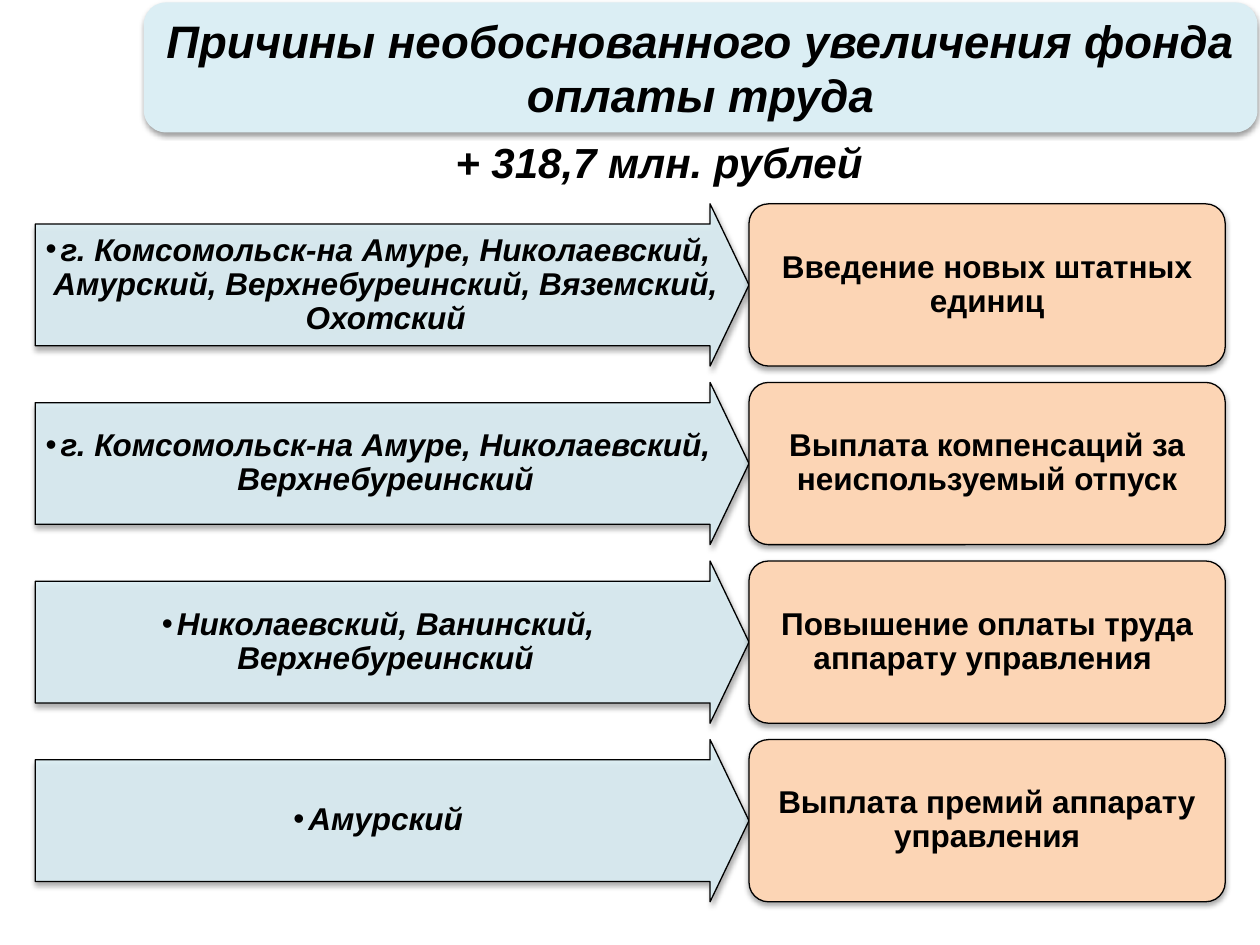
from lxml.etree import SubElement
from pptx import Presentation
from pptx.dml.color import RGBColor
from pptx.enum.shapes import MSO_SHAPE
from pptx.enum.text import MSO_ANCHOR, PP_ALIGN
from pptx.oxml.ns import qn
from pptx.util import Cm, Pt

BLACK = "000000"
PALE_BLUE = "DBEEF4"
PEACH = "FCD5B5"

FIRST_ROW = 4.11
ROW_PITCH = 3.6
ROW_HEIGHT = 3.27

REASONS = [
    ("г. Комсомольск-на Амуре, Николаевский, Амурский, Верхнебуреинский, Вяземский, Охотский",
     "Введение новых штатных единиц"),
    ("г. Комсомольск-на Амуре, Николаевский, Верхнебуреинский",
     "Выплата компенсаций за неиспользуемый отпуск"),
    ("Николаевский, Ванинский, Верхнебуреинский",
     "Повышение оплаты труда аппарату управления "),
    ("Амурский", "Выплата премий аппарату управления"),
]


def color(hex_value):
    return RGBColor.from_string(hex_value)


def add_shadow(shape, opacity):
    shape.shadow.inherit = False
    effects = shape._element.spPr.find(qn("a:effectLst"))
    outer = SubElement(effects, qn("a:outerShdw"), blurRad=str(Pt(3.1)),
                       dist=str(Pt(1.7)), dir="5400000", rotWithShape="0")
    tint = SubElement(outer, qn("a:srgbClr"), val=BLACK)
    SubElement(tint, qn("a:alpha"), val=str(opacity * 1000))


def write(shape, text, size, italic, margins):
    frame = shape.text_frame
    frame.text = text
    frame.word_wrap = True
    frame.vertical_anchor = MSO_ANCHOR.MIDDLE
    (frame.margin_left, frame.margin_top,
     frame.margin_right, frame.margin_bottom) = [Cm(margin) for margin in margins]
    paragraph = frame.paragraphs[0]
    paragraph.alignment = PP_ALIGN.CENTER
    font = paragraph.runs[0].font
    font.name, font.size, font.bold, font.italic = "Arial", Pt(size), True, italic
    font.color.rgb = color(BLACK)
    return paragraph


def add_panel(slide, preset, box, fill, adjustments, outlined=True):
    panel = slide.shapes.add_shape(preset, *[Cm(length) for length in box])
    for index, value in enumerate(adjustments):
        panel.adjustments[index] = value
    panel.fill.solid()
    panel.fill.fore_color.rgb = color(fill)
    if outlined:
        panel.line.color.rgb = color(BLACK)
        panel.line.width = Pt(0.75)
    else:
        panel.line.fill.background()
    add_shadow(panel, 35 if outlined else 38)
    return panel


def add_title(slide, text):
    title = add_panel(slide, MSO_SHAPE.ROUNDED_RECTANGLE, (2.9, 0.05, 22.45, 2.62),
                      PALE_BLUE, [0.17], outlined=False)
    write(title, text, 26, True, (0, 0, 0, 0))


def add_total(slide, text):
    total = slide.shapes.add_textbox(Cm(8.89), Cm(2.62), Cm(8.79), Cm(1.27))
    write(total, text, 24, True, (0.25, 0.13, 0.25, 0.13))
    total.text_frame.word_wrap = False


def add_districts(slide, top, text):
    arrow = add_panel(slide, MSO_SHAPE.RIGHT_ARROW, (0.71, top, 14.39, ROW_HEIGHT),
                      PALE_BLUE, [0.75, 0.24])
    tint = arrow._element.spPr.find(qn("a:solidFill"))[0]
    SubElement(tint, qn("a:alpha"), val="90000")
    paragraph = write(arrow, text, 18, True, (0.03, 0, 0, 0))
    paragraph.level = 1
    paragraph.line_spacing = 0.9
    properties = paragraph._p.get_or_add_pPr()
    properties.set("marL", str(Cm(0.3)))
    properties.set("indent", str(Cm(-0.3)))
    SubElement(properties, qn("a:buFont"), typeface="Arial")
    SubElement(properties, qn("a:buChar"), char="•")


def add_reason(slide, top, text):
    reason = add_panel(slide, MSO_SHAPE.ROUNDED_RECTANGLE, (15.1, top, 9.6, ROW_HEIGHT),
                       PEACH, [0.12])
    write(reason, text, 18, False, (0.13, 0.05, 0.13, 0.05)).line_spacing = 0.9


def main():
    deck = Presentation()
    deck.slide_width, deck.slide_height = Cm(25.4), Cm(19.05)
    slide = deck.slides.add_slide(deck.slide_layouts[6])
    add_title(slide, "Причины необоснованного увеличения фонда оплаты труда")
    for row, (districts, reason) in enumerate(REASONS):
        top = FIRST_ROW + row * ROW_PITCH
        add_districts(slide, top, districts)
        add_reason(slide, top, reason)
    add_total(slide, "+ 318,7 млн. рублей")
    deck.save("out.pptx")


if __name__ == "__main__":
    main()
